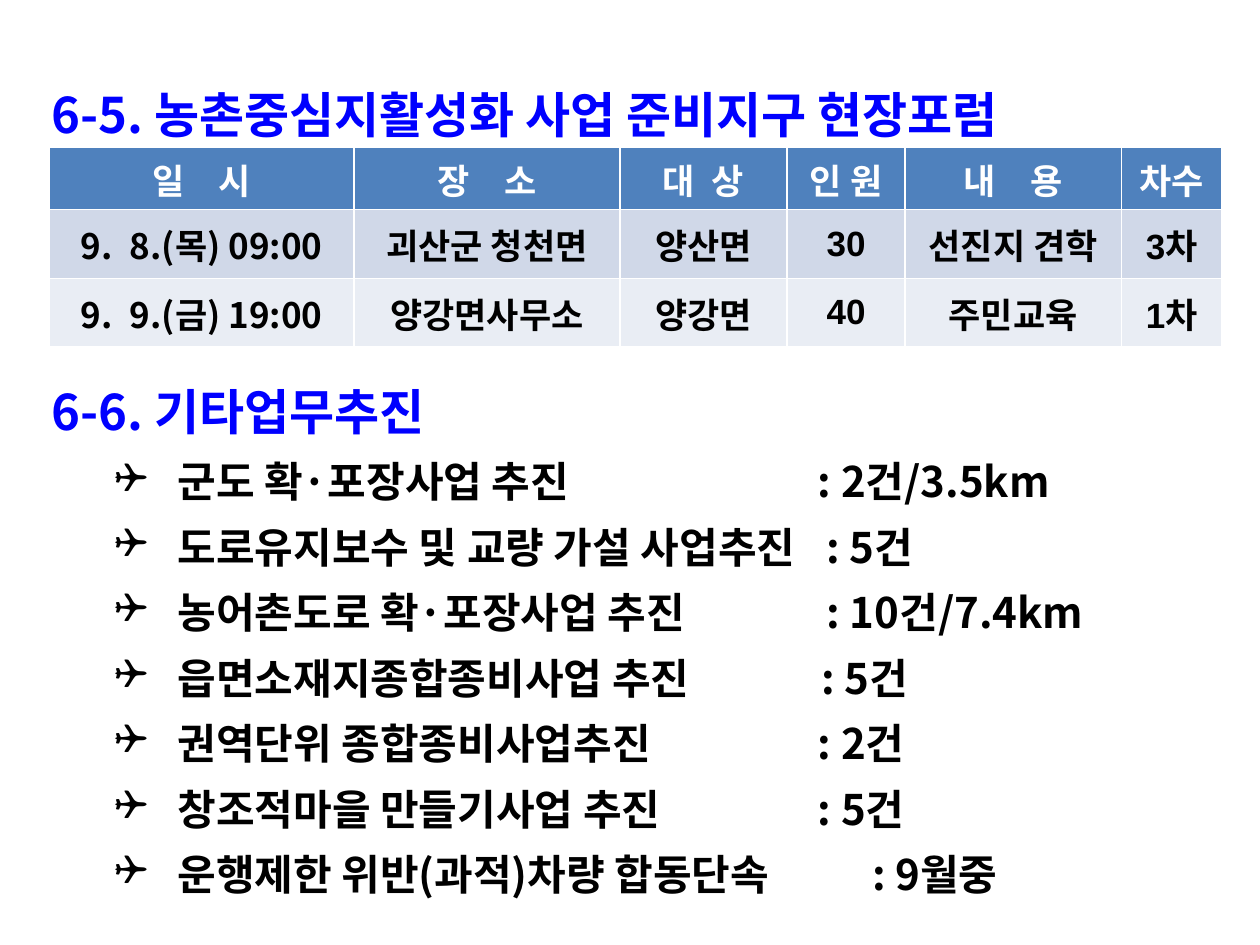
from lxml.etree import SubElement
from pptx import Presentation
from pptx.dml.color import RGBColor
from pptx.enum.text import MSO_ANCHOR, MSO_AUTO_SIZE, PP_ALIGN
from pptx.oxml.ns import qn
from pptx.util import Pt

COLORS = {"heading": "0000FF", "text": "000000", "header_text": "FFFFFF",
          "header": "4F81BD", "odd_row": "D0D8E8", "even_row": "E9EDF4"}
KOREAN_FONT = "Noto Sans CJK KR"


def style(paragraph, size, color, name=KOREAN_FONT):
    font = paragraph.font
    font.size, font.bold, font.name = Pt(size), True, name
    font.color.rgb = RGBColor.from_string(COLORS[color])
    east_asian = SubElement(paragraph._p.pPr.find(qn("a:defRPr")), qn("a:ea"))
    east_asian.set("typeface", KOREAN_FONT)


def set_indent(paragraph, margin, hanging, tab, bullet=None):
    properties = paragraph._p.get_or_add_pPr()
    properties.set("marL", str(Pt(margin)))
    properties.set("indent", str(-Pt(hanging)))
    if bullet:
        SubElement(properties, qn("a:buFont")).set("typeface", "Wingdings")
        SubElement(properties, qn("a:buChar")).set("char", bullet)
    else:
        SubElement(properties, qn("a:buNone"))
    tabs = SubElement(properties, qn("a:tabLst"))
    SubElement(tabs, qn("a:tab"), pos=str(Pt(tab)), algn="l")


presentation = Presentation()
presentation.slide_width, presentation.slide_height = Pt(720), Pt(540)
slide = presentation.slides.add_slide(presentation.slide_layouts[6])

# Forum heading
heading_box = slide.shapes.add_textbox(Pt(22.3), Pt(28), Pt(675), Pt(264))
heading_box.text_frame.word_wrap = False
paragraph = heading_box.text_frame.paragraphs[0]
paragraph.text = "6-5. 농촌중심지활성화 사업 준비지구 현장포럼"
paragraph.line_spacing = 1.5
style(paragraph, 28, "heading")

# Forum schedule; the second item widens the first space of a cell, in points
rows = [
    [("일 시", 15), ("장 소", 15), ("대 상", 5), ("인 원", 0), ("내 용", 15), ("차수", 0)],
    [("9. 8.(목) 09:00", 5), ("괴산군 청천면", 0), ("양산면", 0), ("30", 0),
     ("선진지 견학", 0), ("3차", 0)],
    [("9. 9.(금) 19:00", 5), ("양강면사무소", 0), ("양강면", 0), ("40", 0),
     ("주민교육", 0), ("1차", 0)],
]
column_widths = [174, 152, 95.5, 67.5, 123.5, 57.5]
row_heights = [35.5, 39.3, 39.3]
row_fills = ["header", "odd_row", "even_row"]
table = slide.shapes.add_table(len(rows), len(column_widths), Pt(28.3), Pt(84.3),
                               Pt(sum(column_widths)), Pt(sum(row_heights))).table
for column, width in zip(table.columns, column_widths):
    column.width = Pt(width)
for row_index, row in enumerate(rows):
    table.rows[row_index].height = Pt(row_heights[row_index])
    for column_index, (text, gap) in enumerate(row):
        cell = table.cell(row_index, column_index)
        cell.fill.solid()
        cell.fill.fore_color.rgb = RGBColor.from_string(COLORS[row_fills[row_index]])
        cell.vertical_anchor = MSO_ANCHOR.MIDDLE
        paragraph = cell.text_frame.paragraphs[0]
        paragraph.alignment = PP_ALIGN.CENTER
        is_korean = row_index == 0 or column_index == 0
        style(paragraph, 20, "text" if row_index else "header_text",
              KOREAN_FONT if is_korean else "Arial")
        for part in text.partition(" ") if gap else [text]:
            run = paragraph.add_run()
            run.text = part
            if part == " ":
                run.font._element.set("spc", str(gap * 100))

# Other work: heading and bulleted list with values at a tab stop
work_box = slide.shapes.add_textbox(Pt(22.3), Pt(208), Pt(680), Pt(350.6))
frame = work_box.text_frame
frame.word_wrap = True
frame.auto_size = MSO_AUTO_SIZE.SHAPE_TO_FIT_TEXT
paragraph = frame.paragraphs[0]
paragraph.text = "6-6. 기타업무추진"
paragraph.line_spacing = 1.2
set_indent(paragraph, 42, 42, 390)
style(paragraph, 28, "heading")

tasks = [
    ("군도 확·포장사업 추진", "2건/3.5km", 438),
    ("도로유지보수 및 교량 가설 사업추진", "5건", 443),
    ("농어촌도로 확·포장사업 추진", "10건/7.4km", 443),
    ("읍면소재지종합종비사업 추진", "5건", 440),
    ("권역단위 종합종비사업추진", "2건", 438),
    ("창조적마을 만들기사업 추진", "5건", 438),
    ("운행제한 위반(과적)차량 합동단속", "9월중", 469),
]
for task, amount, tab in tasks:
    paragraph = frame.add_paragraph()
    paragraph.text = f"{task}\t: {amount}"
    paragraph.level = 1
    paragraph.line_spacing = 1.3
    set_indent(paragraph, 72, 36, tab, "❑")
    style(paragraph, 24, "text")

presentation.save("out.pptx")
